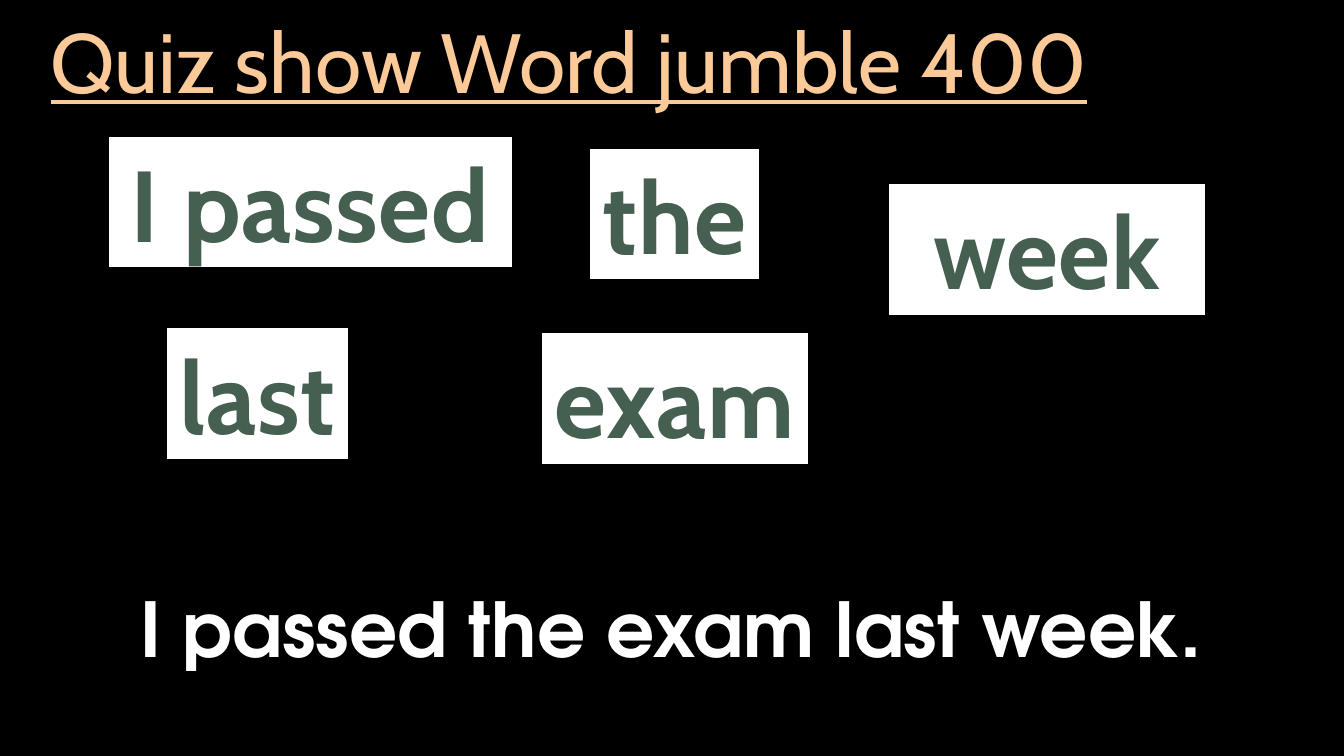
from dataclasses import dataclass

from pptx import Presentation
from pptx import util as u
from pptx.dml.color import RGBColor
from pptx.enum import shapes, text


@dataclass(frozen=True)
class Theme:
    back: str = "000000"
    title: str = "FBCA98"
    card: str = "FFFFFF"
    word: str = "455F51"
    answer: str = "FFFFFF"
    font: str = "Cabin"
    strong: str = "TeX Gyre Adventor"
    title_size: int = 60
    word_size: int = 72
    answer_size: int = 54


def write(frame, words, *, font, size, color, bold=False, line=False,
          align=text.PP_ALIGN.CENTER, anchor=text.MSO_ANCHOR.MIDDLE,
          wrap=True, fit=text.MSO_AUTO_SIZE.SHAPE_TO_FIT_TEXT,
          lead=1.0, track=0):
    frame.word_wrap = wrap
    frame.auto_size = fit
    frame.vertical_anchor = anchor
    para = frame.paragraphs[0]
    para.alignment = align
    para.line_spacing = lead
    run = para.add_run()
    run.text = words
    style = run.font
    style.name, style.size = font, u.Pt(size)
    style.bold, style.underline = bold, line
    style.color.rgb = RGBColor.from_string(color)
    if track:
        run._r.get_or_add_rPr().set("spc", str(round(track * 100)))


class Board:
    def __init__(self, deck, theme):
        self.theme = theme
        self.slide = deck.slides.add_slide(deck.slide_layouts[5])
        fill = self.slide.background.fill
        fill.solid()
        fill.fore_color.rgb = RGBColor.from_string(theme.back)

    def title(self, words, *box):
        head = self.slide.shapes.title
        head.left, head.top, head.width, head.height = map(u.Cm, box)
        write(head.text_frame, words, font=self.theme.font,
              size=self.theme.title_size, color=self.theme.title, line=True,
              align=text.PP_ALIGN.LEFT, fit=text.MSO_AUTO_SIZE.NONE, lead=0.9)

    def card(self, words, *box, wrap=False):
        card = self.slide.shapes.add_shape(
            shapes.MSO_SHAPE.RECTANGLE, *map(u.Cm, box))
        card.shadow.inherit = False
        card.fill.solid()
        card.fill.fore_color.rgb = RGBColor.from_string(self.theme.card)
        card.line.color.rgb = RGBColor.from_string(self.theme.back)
        card.line.width = u.Pt(1)
        write(card.text_frame, words, font=self.theme.font, bold=True,
              size=self.theme.word_size, color=self.theme.word,
              wrap=wrap, track=0.5)

    def answer(self, words, *box):
        area = self.slide.shapes.add_textbox(*map(u.Cm, box))
        write(area.text_frame, words, font=self.theme.strong, bold=True,
              size=self.theme.answer_size, color=self.theme.answer,
              anchor=text.MSO_ANCHOR.TOP)


def main():
    deck = Presentation()
    deck.slide_width, deck.slide_height = u.Cm(33.87), u.Cm(19.05)
    board = Board(deck, Theme())

    # Heading
    board.title("Quiz show Word jumble 400", 1.02, 0.41, 28.93, 2.51)

    # Jumbled words: left, top, width, wrap
    high = 3.33
    for word, left, top, wide, wrap in (
        ("last", 4.19, 8.26, 4.6, False),
        ("the", 14.86, 3.73, 4.29, False),
        ("week", 22.38, 4.62, 8, True),
        ("exam", 13.64, 8.38, 6.73, False),
        ("I passed", 2.72, 3.43, 10.19, True),
    ):
        board.card(word, left, top, wide, high, wrap=wrap)

    # Solved sentence
    board.answer("I passed the exam last week.", 0, 14.55, 33.83, 2.57)

    deck.save("out.pptx")


if __name__ == "__main__":
    main()
